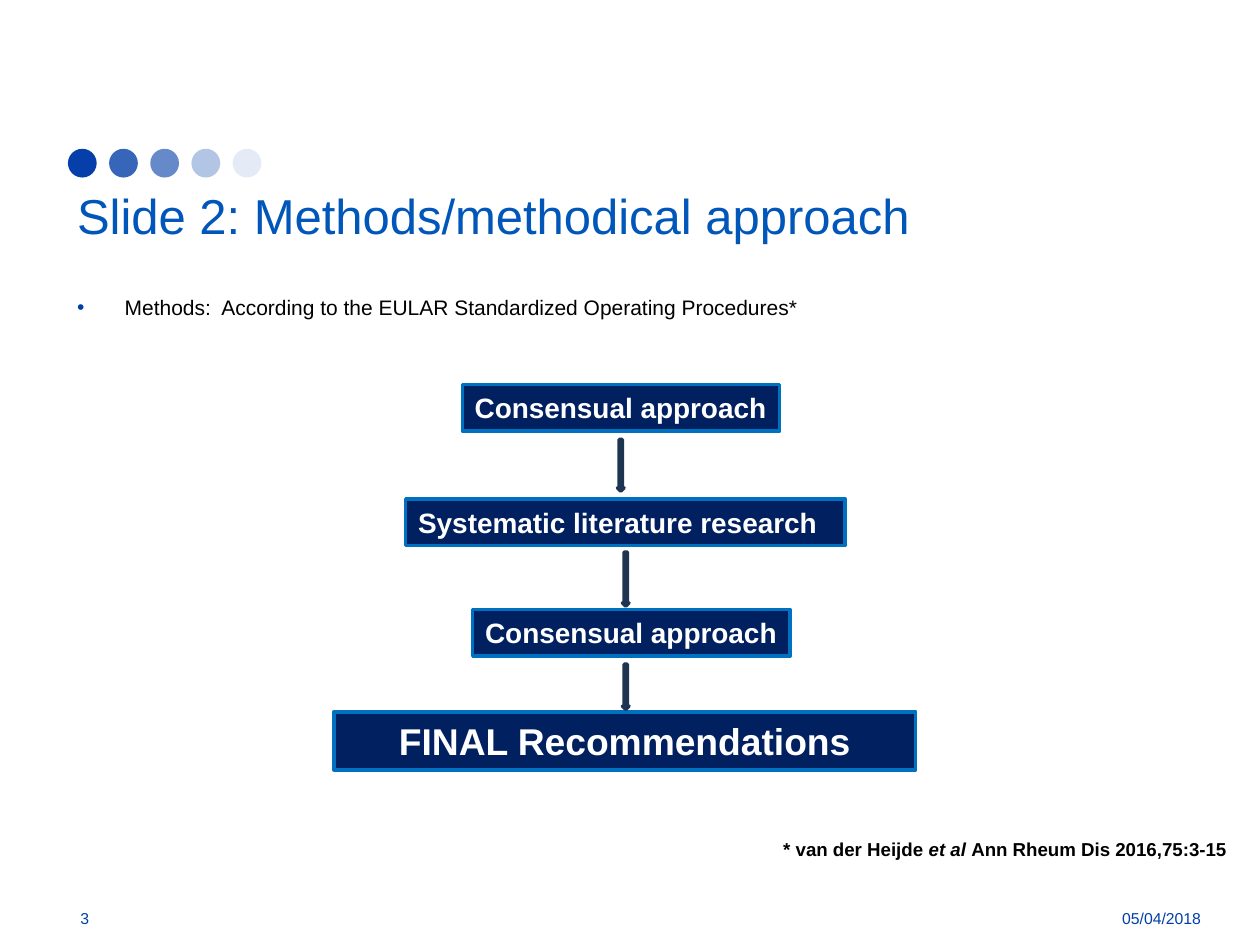
"""Build the methods slide: a flow of four steps under a title and one bullet."""
from dataclasses import dataclass

from lxml import etree
from pptx import Presentation
from pptx.dml.color import RGBColor
from pptx.enum.shapes import MSO_SHAPE
from pptx.enum.text import MSO_ANCHOR, MSO_AUTO_SIZE, PP_ALIGN
from pptx.oxml.ns import qn
from pptx.util import Cm, Pt

OVAL, RECTANGLE, DOWN_ARROW = MSO_SHAPE.OVAL, MSO_SHAPE.RECTANGLE, MSO_SHAPE.DOWN_ARROW
LEFT, CENTER, RIGHT = PP_ALIGN.LEFT, PP_ALIGN.CENTER, PP_ALIGN.RIGHT
TOP, MIDDLE = MSO_ANCHOR.TOP, MSO_ANCHOR.MIDDLE
NO_FIT = MSO_AUTO_SIZE.NONE

FONT = "Arial"
COLORS = {
    "title": "0056B9", "footer": "003FA8", "dot": "063FA9", "text": "000000",
    "step": "002060", "step_line": "0070C0", "step_text": "FFFFFF",
    "arrow": "28476D", "arrow_line": "1E3551",
}


@dataclass
class Area:
    left: float
    top: float
    width: float
    height: float

    def lengths(self) -> tuple:
        return Cm(self.left), Cm(self.top), Cm(self.width), Cm(self.height)


@dataclass
class Step:
    text: str
    area: Area
    size: float = 16
    align: PP_ALIGN = LEFT


@dataclass
class Label:
    text: str
    area: Area
    align: PP_ALIGN


STEPS = [
    Step("Consensual approach", Area(9.32, 7.75, 6.4, 0.94)),
    Step("Systematic literature research", Area(8.18, 10.06, 8.86, 0.94)),
    Step("Consensual approach", Area(9.53, 12.29, 6.4, 0.94)),
    Step("FINAL Recommendations", Area(6.73, 14.35, 11.73, 1.17), 21.3, CENTER),
]
ARROWS = [
    Area(12.45, 8.86, 0.13, 1.04),
    Area(12.55, 11.13, 0.13, 1.09),
    Area(12.55, 13.39, 0.13, 0.91),
]
FOOTERS = [
    Label("3", Area(1.37, 18.01, 2.44, 1.02), LEFT),
    Label("05/04/2018", Area(21.06, 18.01, 3.4, 1.02), RIGHT),
]
DOT_OPACITIES = [100, 80, 61, 30, 10]
DOT_LEFT, DOT_TOP, DOT_SIZE, DOT_PITCH = 1.37, 3.0, 0.58, 0.83


def color(name: str) -> RGBColor:
    return RGBColor.from_string(COLORS[name])


def style(para, size: float, ink: str, align: PP_ALIGN = LEFT, bold: bool = False) -> None:
    para.alignment = align
    for span in para.runs:
        span.font.name = FONT
        span.font.size = Pt(size)
        span.font.bold = bold
        span.font.color.rgb = color(ink)


def add_figure(page, kind: MSO_SHAPE, area: Area, fill: str, line: str = ""):
    figure = page.shapes.add_shape(kind, *area.lengths())
    figure.shadow.inherit = False
    figure.fill.solid()
    figure.fill.fore_color.rgb = color(fill)
    if line:
        figure.line.color.rgb = color(line)
        figure.line.width = Pt(2)
    else:
        figure.line.fill.background()
    return figure


def add_dots(page) -> None:
    for index, opacity in enumerate(DOT_OPACITIES):
        area = Area(DOT_LEFT + index * DOT_PITCH, DOT_TOP, DOT_SIZE, DOT_SIZE)
        dot = add_figure(page, OVAL, area, "dot")
        if opacity < 100:
            tint = dot._element.spPr.find(f"{qn('a:solidFill')}/{qn('a:srgbClr')}")
            etree.SubElement(tint, qn("a:alpha"), val=str(opacity * 1000))


def add_step(page, step: Step) -> None:
    box = add_figure(page, RECTANGLE, step.area, "step", "step_line")
    box.text_frame.text = step.text
    box.text_frame.vertical_anchor = TOP
    style(box.text_frame.paragraphs[0], step.size, "step_text", step.align, True)


def add_footer(page, label: Label) -> None:
    box = page.shapes.add_textbox(*label.area.lengths())
    box.text_frame.word_wrap = True
    box.text_frame.vertical_anchor = MIDDLE
    box.text_frame.text = label.text
    style(box.text_frame.paragraphs[0], 9, "footer", label.align)


def add_citation(page, area: Area) -> None:
    box = page.shapes.add_textbox(*area.lengths())
    box.text_frame.word_wrap = False
    para = box.text_frame.paragraphs[0]
    for text in ("* van der Heijde ", "et al ", "Ann Rheum Dis 2016,75:3-15"):
        para.add_run().text = text
    style(para, 10.7, "text", bold=True)
    para.runs[1].font.italic = True


def fill_placeholder(box, text: str, area: Area):
    box.left, box.top, box.width, box.height = area.lengths()
    box.text_frame.text = text
    box.text_frame.vertical_anchor = TOP
    box.text_frame.auto_size = NO_FIT
    return box.text_frame.paragraphs[0]


def add_bullet(para) -> None:
    properties = para._p.get_or_add_pPr()
    properties.set("marL", str(Cm(0.96)))
    properties.set("indent", str(Cm(-0.96)))
    tint = etree.SubElement(properties, qn("a:buClr"))
    etree.SubElement(tint, qn("a:srgbClr"), val=COLORS["footer"])
    etree.SubElement(properties, qn("a:buFont"), typeface=FONT)
    etree.SubElement(properties, qn("a:buChar"), char="•")
    para.space_before = Pt(0)
    para.space_after = Pt(12)


def main() -> None:
    deck = Presentation()
    deck.slide_width, deck.slide_height = Cm(25.4), Cm(19.05)
    page = deck.slides.add_slide(deck.slide_layouts[1])

    add_dots(page)
    title = fill_placeholder(page.shapes.title, "Slide 2: Methods/methodical approach",
                             Area(1.3, 3.61, 23.14, 1.75))
    style(title, 28, "title")
    methods = fill_placeholder(
        page.placeholders[1],
        "Methods:  According to the EULAR Standardized Operating Procedures*",
        Area(1.3, 5.82, 23.14, 11.46))
    add_bullet(methods)
    style(methods, 12, "text")

    for step in STEPS:
        add_step(page, step)
    for area in ARROWS:
        add_figure(page, DOWN_ARROW, area, "arrow", "arrow_line")
    for label in FOOTERS:
        add_footer(page, label)
    add_citation(page, Area(15.54, 16.76, 9.55, 0.71))
    deck.save("out.pptx")


if __name__ == "__main__":
    main()
